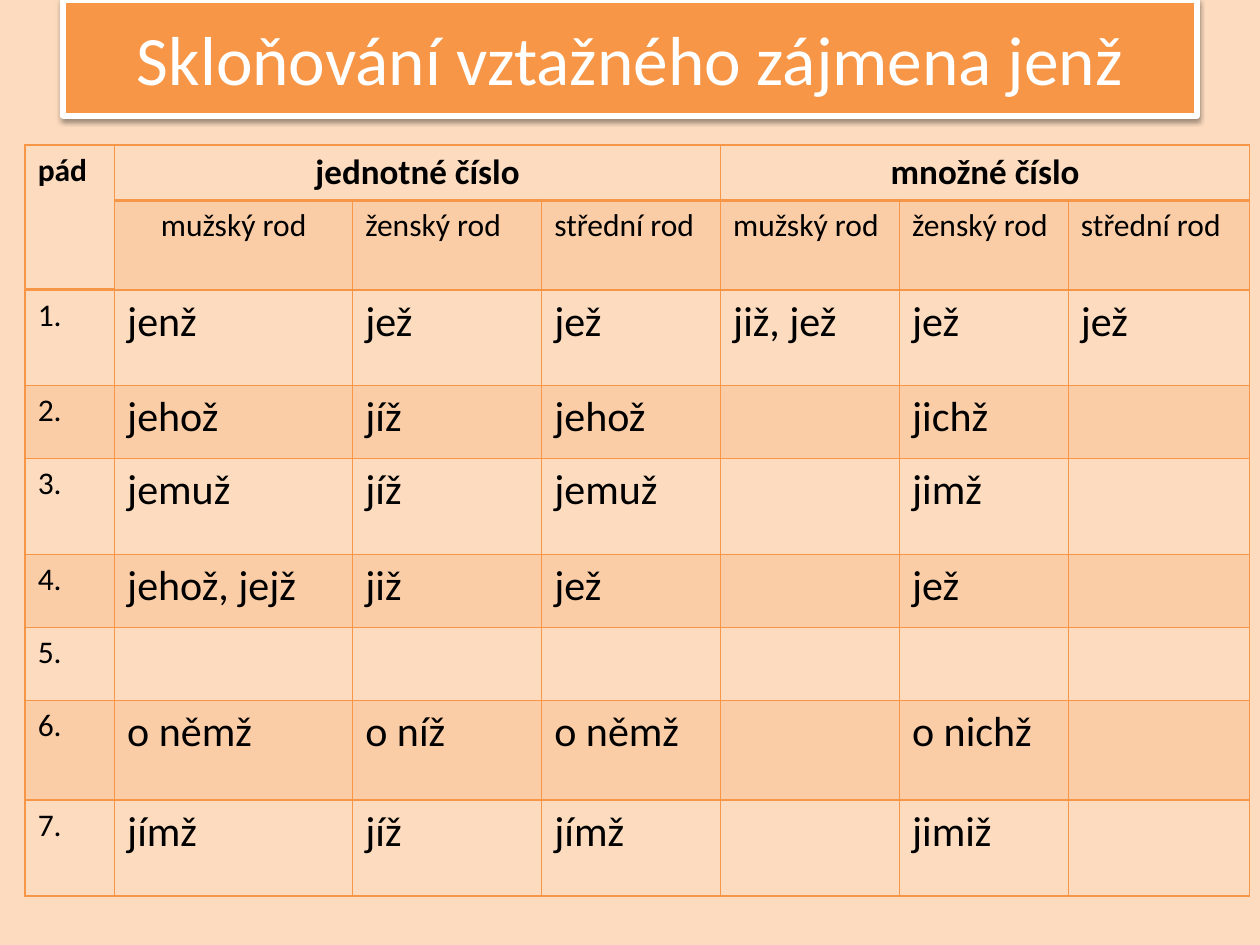
import pptx
import pptx.util
import pptx.oxml
import pptx.oxml.ns
import pptx.dml.color
import pptx.enum.text
import lxml.etree
from dataclasses import dataclass

Inches = pptx.util.Inches
Pt = pptx.util.Pt
qn = pptx.oxml.ns.qn
Align = pptx.enum.text.PP_ALIGN
Anchor = pptx.enum.text.MSO_ANCHOR
NS = pptx.oxml.ns.nsdecls("a")


@dataclass(frozen=True)
class Theme:
    font: str = "Calibri"
    orange: str = "F79646"
    peach: str = "FAC090"
    white: str = "FFFFFF"
    black: str = "000000"
    title: float = 39.6
    head: int = 20
    label: int = 18
    form: int = 24
    thin: int = 1
    thick: int = 2


COLS = [0.71, 1.89, 1.5, 1.42, 1.42, 1.34, 1.44]
ROWS = [0.44, 0.71, 0.76, 0.58, 0.76, 0.58, 0.58, 0.79, 0.76]
GENDERS = ["mužský rod", "ženský rod", "střední rod"]
FORMS = [
    ["jenž", "jež", "jež", "již, jež", "jež", "jež"],
    ["jehož", "jíž", "jehož", "", "jichž", ""],
    ["jemuž", "jíž", "jemuž", "", "jimž", ""],
    ["jehož, jejž", "již", "jež", "", "jež", ""],
    [""] * 6,
    ["o němž", "o níž", "o němž", "", "o nichž", ""],
    ["jímž", "jíž", "jímž", "", "jimiž", ""],
]


class Deck:
    def __init__(self, theme):
        self.theme = theme
        self.show = pptx.Presentation()
        self.show.slide_width = Inches(10)
        self.show.slide_height = Inches(7.5)
        self.slide = self.show.slides.add_slide(self.show.slide_layouts[5])

    def paint(self, fill, color):
        fill.solid()
        fill.fore_color.rgb = pptx.dml.color.RGBColor.from_string(color)

    def fade(self, props, alpha):
        """Make the solid fill directly under props see-through."""
        tone = props.find(f"{qn('a:solidFill')}/{qn('a:srgbClr')}")
        lxml.etree.SubElement(tone, qn("a:alpha")).set("val", str(alpha * 1000))

    def label(self, frame, text, size, color, bold=False, align=Align.LEFT):
        frame.text = text
        line = frame.paragraphs[0]
        line.alignment = align
        line.font.name = self.theme.font
        line.font.size = Pt(size)
        line.font.bold = bold
        line.font.color.rgb = pptx.dml.color.RGBColor.from_string(color)

    def ground(self):
        self.paint(self.slide.background.fill, self.theme.peach)
        self.fade(self.slide.element.find(f".//{qn('p:bgPr')}"), 57)

    def title(self, text):
        look = self.theme
        box = self.slide.shapes.title
        box.left, box.top = Inches(0.5), Inches(0)
        box.width, box.height = Inches(9), Inches(0.92)
        self.paint(box.fill, look.orange)
        self.paint(box.line.fill, look.white)
        box.line.width = Pt(3)
        box.element.spPr.append(pptx.oxml.parse_xml(
            f'<a:effectLst {NS}><a:outerShdw blurRad="{Pt(3.1)}" dist="{Pt(1.6)}" '
            f'dir="5400000" rotWithShape="0"><a:srgbClr val="{look.black}">'
            '<a:alpha val="38000"/></a:srgbClr></a:outerShdw></a:effectLst>'))
        box.text_frame.vertical_anchor = Anchor.MIDDLE
        self.label(box.text_frame, text, look.title, look.white, align=Align.CENTER)

    def edge(self, props, row, col):
        """Draw the cell borders, thicker under the header cells."""
        look = self.theme
        heads = [(0, c) for c in range(1, len(COLS))] + [(1, 0)]
        wide = {"T": (row - 1, col) in heads, "B": (row, col) in heads}
        for side in "LRTB":
            width = look.thick if wide.get(side) else look.thin
            props.append(pptx.oxml.parse_xml(
                f'<a:ln{side} {NS} w="{Pt(width)}"><a:solidFill>'
                f'<a:srgbClr val="{look.orange}"/></a:solidFill></a:ln{side}>'))

    def table(self):
        grid = self.slide.shapes.add_table(
            len(ROWS), len(COLS), Inches(0.2), Inches(1.15),
            Inches(sum(COLS)), Inches(sum(ROWS))).table
        grid.first_row = grid.horz_banding = False
        for col, width in zip(grid.columns, COLS):
            col.width = Inches(width)
        for row, height in zip(grid.rows, ROWS):
            row.height = Inches(height)
        for r in range(len(ROWS)):
            for c in range(len(COLS)):
                cell = grid.cell(r, c)
                props = cell._tc.get_or_add_tcPr()
                self.edge(props, r, c)
                if r % 2 and (r, c) != (1, 0):
                    self.paint(cell.fill, self.theme.orange)
                    self.fade(props, 20)
                else:
                    cell.fill.background()
        return grid

    def put(self, cell, text, size, **style):
        if not text:
            return
        self.label(cell.text_frame, text, size, self.theme.black, **style)


def main():
    look = Theme()
    deck = Deck(look)
    deck.ground()
    deck.title("Skloňování vztažného zájmena jenž")
    grid = deck.table()

    grid.cell(0, 0).merge(grid.cell(1, 0))
    deck.put(grid.cell(0, 0), "pád", look.label, bold=True)
    for col, text in [(1, "jednotné číslo"), (4, "množné číslo")]:
        grid.cell(0, col).merge(grid.cell(0, col + 2))
        deck.put(grid.cell(0, col), text, look.head, bold=True, align=Align.CENTER)
    for col, text in enumerate(GENDERS * 2, 1):
        align = Align.CENTER if col == 1 else Align.LEFT
        deck.put(grid.cell(1, col), text, look.label, align=align)
    for num, forms in enumerate(FORMS, 1):
        deck.put(grid.cell(num + 1, 0), f"{num}.", look.label)
        for col, text in enumerate(forms, 1):
            deck.put(grid.cell(num + 1, col), text, look.form)
    deck.show.save("out.pptx")


if __name__ == "__main__":
    main()
